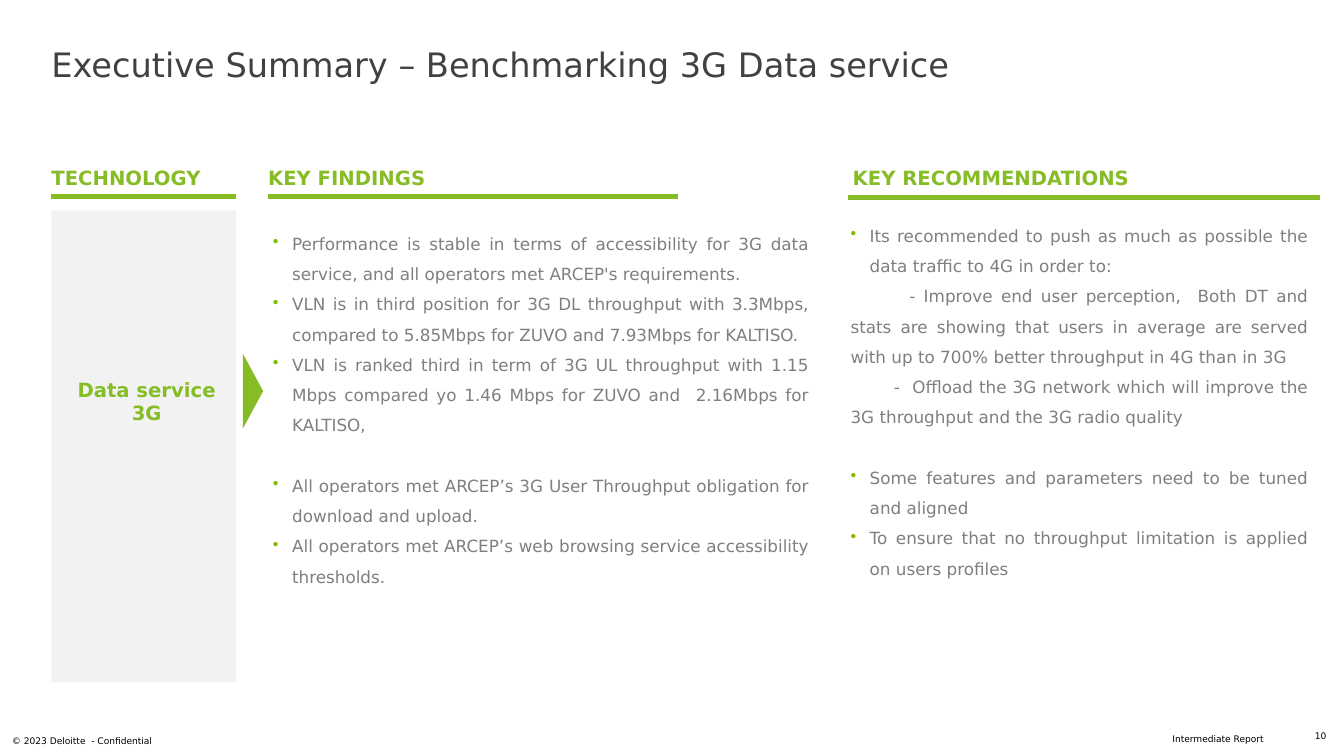
"""Builds the executive summary slide on the 3G data service benchmark."""
from lxml import etree
from pptx import Presentation
from pptx.dml.color import RGBColor
from pptx.enum.shapes import MSO_CONNECTOR, MSO_SHAPE
from pptx.enum.text import MSO_ANCHOR, PP_ALIGN
from pptx.oxml.ns import qn
from pptx.util import Pt

LEFT, CENTER = PP_ALIGN.LEFT, PP_ALIGN.CENTER
RIGHT, JUSTIFY = PP_ALIGN.RIGHT, PP_ALIGN.JUSTIFY
TOP, MIDDLE = MSO_ANCHOR.TOP, MSO_ANCHOR.MIDDLE
RECTANGLE, TRIANGLE = MSO_SHAPE.RECTANGLE, MSO_SHAPE.ISOSCELES_TRIANGLE
STRAIGHT = MSO_CONNECTOR.STRAIGHT

GREEN = RGBColor(0x86, 0xBC, 0x25)
BULLET_GREEN = RGBColor(0x81, 0xBC, 0x00)
PANEL_GREY = RGBColor(0xF2, 0xF2, 0xF2)
BODY_GREY = RGBColor(0x7F, 0x7F, 0x7F)
TITLE_GREY = RGBColor(0x41, 0x41, 0x41)
BLACK = RGBColor(0, 0, 0)
FONT = "DejaVu Sans"
BULLET_INDENT = 13.7
GROUP_GAP = 21.6

deck = Presentation()
deck.slide_width, deck.slide_height = Pt(960), Pt(540)
slide = deck.slides.add_slide(deck.slide_layouts[6])


def write(frame, text, size=12, color=BODY_GREY, bold=False, align=LEFT,
          spacing=1.0, before=0, left=0, first=0, bullet=False):
    paragraph = frame.paragraphs[0]
    if paragraph.runs:
        paragraph = frame.add_paragraph()
    props = paragraph._p.get_or_add_pPr()
    props.set("marL", str(Pt(left)))
    props.set("indent", str(Pt(first)))
    if bullet:
        bullet_color = etree.SubElement(props, qn("a:buClr"))
        etree.SubElement(bullet_color, qn("a:srgbClr"), val=str(BULLET_GREEN))
        etree.SubElement(props, qn("a:buChar"), char="•")
    paragraph.alignment = align
    paragraph.line_spacing = spacing
    if before:
        paragraph.space_before = Pt(before)
    run = paragraph.add_run()
    run.text = text
    run.font.name, run.font.size = FONT, Pt(size)
    run.font.bold, run.font.color.rgb = bold, color


def add_frame(x, y, width, height, inset_x=0, inset_y=0):
    frame = slide.shapes.add_textbox(Pt(x), Pt(y), Pt(width), Pt(height)).text_frame
    frame.word_wrap = True
    frame.vertical_anchor = TOP
    frame.margin_left = frame.margin_right = Pt(inset_x)
    frame.margin_top = frame.margin_bottom = Pt(inset_y)
    return frame


write(add_frame(36.7, 31.7, 886.3, 26.6),
      "Executive Summary – Benchmarking 3G Data service", size=24, color=TITLE_GREY)

footers = [
    ("© 2023 Deloitte  - Confidential", 8.6, 525.6, 324, LEFT),
    ("Intermediate Report", 837.4, 524.2, 122.6, LEFT),
    ("10", 923, 522, 24.5, RIGHT),
]
for footer, x, y, width, align in footers:
    write(add_frame(x, y, width, 7.9), footer, size=6.5, color=BLACK, align=align)

headings = [
    ("TECHNOLOGY", 36.7, 36.7, 168.5, 140.4),
    ("KEY FINDINGS", 191.5, 191.5, 484.6, 140.4),
    ("KEY RECOMMENDATIONS", 609.1, 605.5, 943.2, 141.1),
]
for heading, x, rule_start, rule_end, rule_y in headings:
    write(add_frame(x, 120.2, 300, 15.1), heading, size=14, color=GREEN,
          bold=True, spacing=0.9)
    rule = slide.shapes.add_connector(
        STRAIGHT, Pt(rule_start), Pt(rule_y), Pt(rule_end), Pt(rule_y))
    rule.line.color.rgb, rule.line.width = GREEN, Pt(3)
    etree.SubElement(rule._element.spPr, qn("a:effectLst"))

panel = slide.shapes.add_shape(RECTANGLE, Pt(36.7), Pt(150.5), Pt(131.8), Pt(337))
pointer = slide.shapes.add_shape(TRIANGLE, Pt(154.1), Pt(272.2), Pt(53.3), Pt(14.4))
pointer.rotation = 90
for block, color in ((panel, PANEL_GREY), (pointer, GREEN)):
    block.shadow.inherit = False
    block.fill.solid()
    block.fill.fore_color.rgb = color
    block.line.fill.background()

service = panel.text_frame
service.word_wrap = True
service.vertical_anchor = MIDDLE
service.margin_left = service.margin_right = service.margin_top = Pt(5.8)
service.margin_bottom = Pt(71)
write(service, "Data service 3G", size=14, color=GREEN, bold=True,
      align=CENTER, left=4.3)

findings = [
    ("Performance is stable in terms of accessibility for 3G data service, "
     "and all operators met ARCEP's requirements.", 0),
    ("VLN is in third position for 3G DL throughput with 3.3Mbps, compared to "
     "5.85Mbps for ZUVO and 7.93Mbps for KALTISO.", 0),
    ("VLN is ranked third in term of 3G UL throughput with 1.15 Mbps compared yo "
     "1.46 Mbps for ZUVO and  2.16Mbps for KALTISO,", 0),
    ("All operators met ARCEP’s 3G User Throughput obligation for download "
     "and upload.", GROUP_GAP),
    ("All operators met ARCEP’s web browsing service accessibility thresholds.", 0),
]
findings_frame = add_frame(187.9, 156.2, 397.4, 290, 7.2, 3.6)
for finding, gap in findings:
    write(findings_frame, finding, align=JUSTIFY, spacing=1.5, before=gap,
          left=BULLET_INDENT, first=-BULLET_INDENT, bullet=True)

recommendations = [
    ("Its recommended to push as much as possible the data traffic to 4G "
     "in order to:", 0, BULLET_INDENT, -BULLET_INDENT),
    ("- Improve end user perception,  Both DT and stats are showing that users in "
     "average are served with up to 700% better throughput in 4G than in 3G", 0, 0, 42),
    ("-  Offload the 3G network which will improve the 3G throughput and "
     "the 3G radio quality", 0, 0, 31),
    ("Some features and parameters need to be tuned and aligned",
     GROUP_GAP, BULLET_INDENT, -BULLET_INDENT),
    ("To ensure that no throughput limitation is applied on users profiles",
     0, BULLET_INDENT, -BULLET_INDENT),
]
recommendations_frame = add_frame(600.5, 150.5, 341.3, 319, 7.2, 3.6)
for recommendation, gap, left, first in recommendations:
    write(recommendations_frame, recommendation, align=JUSTIFY, spacing=1.5,
          before=gap, left=left, first=first, bullet=left > 0)

deck.save("out.pptx")
